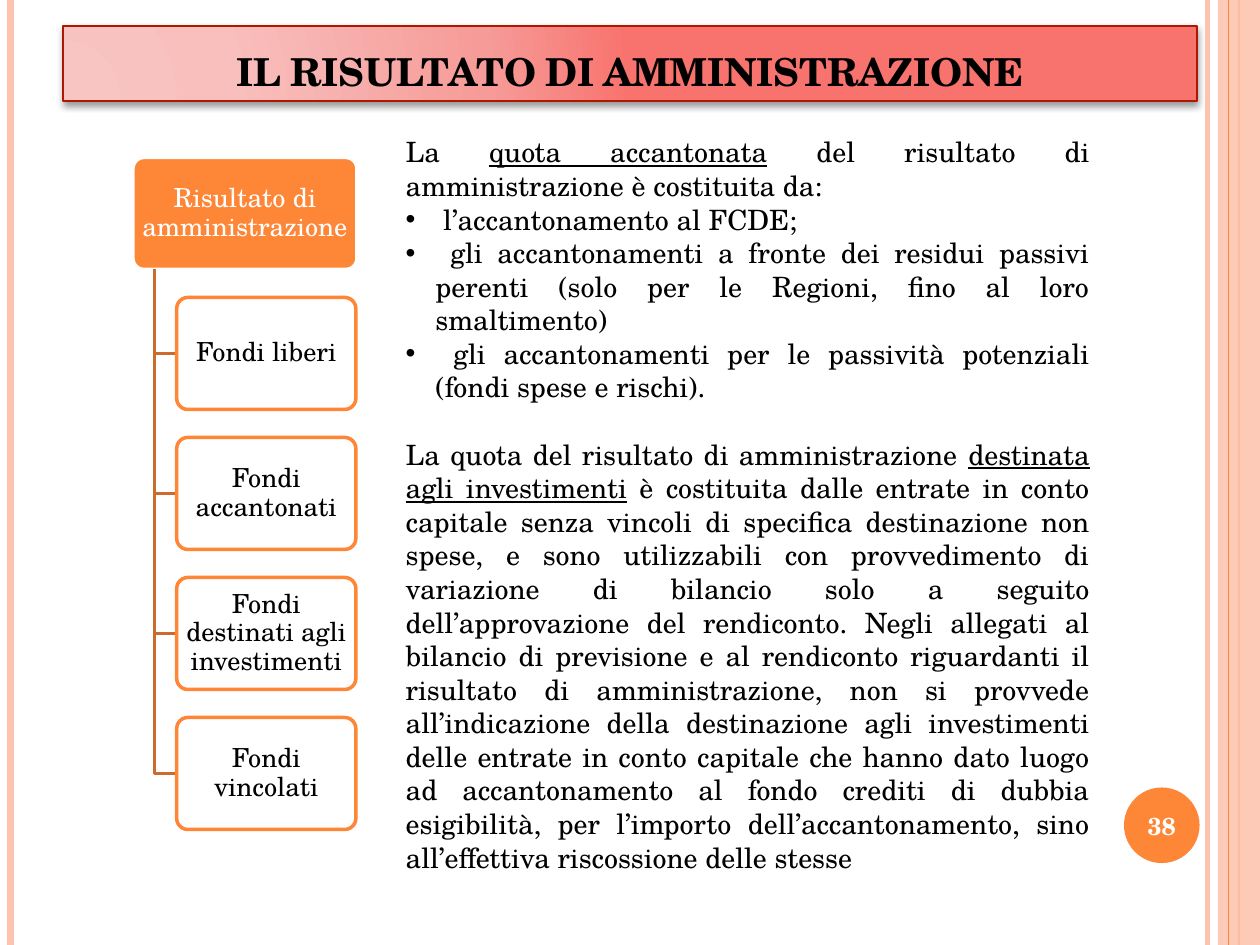
"""Build the slide on the components of the administration result."""
import pptx
import pptx.dml.color
import pptx.enum.shapes
import pptx.enum.text
import pptx.oxml
import pptx.oxml.ns
import pptx.util

Pt = pptx.util.Pt
RGBColor = pptx.dml.color.RGBColor
MSO_SHAPE = pptx.enum.shapes.MSO_SHAPE
PP_ALIGN = pptx.enum.text.PP_ALIGN
MSO_ANCHOR = pptx.enum.text.MSO_ANCHOR
qn = pptx.oxml.ns.qn

ORANGE = RGBColor(0xFE, 0x86, 0x37)
PEACH = RGBColor(0xFE, 0xC3, 0xAE)
BROWN = RGBColor(0xCB, 0x6B, 0x2C)
DARK_RED = RGBColor(0xAC, 0x18, 0x00)
WHITE = RGBColor(0xFF, 0xFF, 0xFF)
BLACK = RGBColor(0x00, 0x00, 0x00)
FONT = "TeX Gyre Schola"
NS = 'xmlns:a="http://schemas.openxmlformats.org/drawingml/2006/main"'

presentation = pptx.Presentation()
presentation.slide_width = Pt(720)
presentation.slide_height = Pt(540)
slide = presentation.slides.add_slide(presentation.slide_layouts[6])
shapes = slide.shapes


def add_block(kind, left, top, width, height, fill, line=None, weight=2):
    block = shapes.add_shape(kind, Pt(left), Pt(top), Pt(width), Pt(height))
    block.shadow.inherit = False
    block.fill.solid()
    block.fill.fore_color.rgb = fill
    if line is None:
        block.line.fill.background()
    else:
        block.line.color.rgb = line
        block.line.width = Pt(weight)
    frame = block.text_frame
    frame.word_wrap = True
    frame.vertical_anchor = MSO_ANCHOR.MIDDLE
    frame.margin_left = frame.margin_right = 0
    frame.margin_top = frame.margin_bottom = 0
    return block


def add_run(paragraph, text, size, color=BLACK, bold=False, underline=False):
    run = paragraph.add_run()
    run.text = text
    run.font.name = FONT
    run.font.size = Pt(size)
    run.font.color.rgb = color
    run.font.bold = bold
    run.font.underline = underline
    return run


for x, color, weight in [(690, PEACH, 3), (6, PEACH, 4.5), (708, ORANGE, 1.5), (702, ORANGE, 0.75)]:
    if x == 702:
        side_band = add_block(MSO_SHAPE.RECTANGLE, 696, 0, 24, 540, PEACH)
        band_color = side_band.fill._xPr.find(qn("a:solidFill"))[0]
        band_color.append(pptx.oxml.parse_xml(f'<a:alpha {NS} val="87000"/>'))
    stripe = shapes.add_connector(
        pptx.enum.shapes.MSO_CONNECTOR.STRAIGHT, Pt(x), 0, Pt(x), Pt(540))
    stripe.line.color.rgb = color
    stripe.line.width = Pt(weight)
    stripe._element.spPr.append(pptx.oxml.parse_xml(f"<a:effectLst {NS}/>"))

page_badge = add_block(MSO_SHAPE.OVAL, 642.3, 450, 43.2, 43.2, ORANGE)
page_number = page_badge.text_frame.paragraphs[0]
page_number.alignment = PP_ALIGN.CENTER
add_run(page_number, "38", 14, WHITE, bold=True)

ROOT_LEFT, ROOT_TOP, ROOT_WIDTH, BOX_HEIGHT = 76, 90, 128, 64
FUND_LEFT, FUND_WIDTH, FUND_PITCH = 101, 102.4, 80
TRUNK_X, ROOT_BOTTOM = 88.4, ROOT_TOP + BOX_HEIGHT
funds = ["Fondi liberi", "Fondi accantonati", "Fondi destinati agli investimenti", "Fondi vincolati"]
boxes = [("Risultato di amministrazione", ROOT_LEFT, ROOT_TOP, ROOT_WIDTH, ORANGE, WHITE, WHITE)]
boxes += [(fund, FUND_LEFT, ROOT_TOP + FUND_PITCH * level, FUND_WIDTH, WHITE, ORANGE, BLACK)
          for level, fund in enumerate(funds, 1)]

for label, left, top, width, fill, outline, text_color in boxes:
    if left == FUND_LEFT:
        middle = top + BOX_HEIGHT / 2
        builder = shapes.build_freeform(Pt(TRUNK_X), Pt(ROOT_BOTTOM))
        builder.add_line_segments(
            [(Pt(TRUNK_X), Pt(middle)), (Pt(FUND_LEFT), Pt(middle))], close=False)
        branch = builder.convert_to_shape()
        branch.shadow.inherit = False
        branch.fill.background()
        branch.line.color.rgb = BROWN
        branch.line.width = Pt(2)
    box = add_block(MSO_SHAPE.ROUNDED_RECTANGLE, left, top, width, BOX_HEIGHT, fill, outline)
    box.adjustments[0] = 0.1
    caption = box.text_frame.paragraphs[0]
    caption.alignment = PP_ALIGN.CENTER
    caption.line_spacing = 0.9
    add_run(caption, label, 15, text_color)

banner = add_block(MSO_SHAPE.RECTANGLE, 36, 14.8, 648, 42.8, WHITE, DARK_RED, 1)
banner_props = banner._element.spPr
stops = [(0, "F8C5C3"), (30, "F8BFBD"), (75, "F69B98"), (100, "F8736E")]
stop_xml = "".join(
    f'<a:gs pos="{pos * 1000}"><a:srgbClr val="{color}"/></a:gs>' for pos, color in stops)
banner_props.replace(banner_props.find(qn("a:solidFill")), pptx.oxml.parse_xml(
    f'<a:gradFill {NS}><a:gsLst>{stop_xml}</a:gsLst><a:path path="circle">'
    '<a:fillToRect l="5000" t="100000" r="120000" b="10000"/></a:path></a:gradFill>'))
banner_props.find(qn("a:effectLst")).append(pptx.oxml.parse_xml(
    f'<a:outerShdw {NS} blurRad="{Pt(4)}" dist="{Pt(2)}" dir="5400000" rotWithShape="0">'
    '<a:srgbClr val="000000"><a:alpha val="40000"/></a:srgbClr></a:outerShdw>'))
banner.text_frame.vertical_anchor = MSO_ANCHOR.BOTTOM
banner.text_frame.margin_bottom = Pt(3.6)
title = banner.text_frame.paragraphs[0]
title.alignment = PP_ALIGN.CENTER
title_run = add_run(title, "IL RISULTATO DI AMMINISTRAZIONE", 22, bold=True)
title_run.font._element.set("cap", "small")

explanation = [
    (False, 0, [("La ", False), ("quota accantonata", True),
                (" del risultato di amministrazione è costituita da:", False)]),
    (True, 0, [(" l’accantonamento al FCDE;", False)]),
    (True, 0, [(" gli accantonamenti a fronte dei residui passivi perenti (solo per le Regioni, "
                "fino al loro smaltimento)", False)]),
    (True, 0, [(" gli accantonamenti per le passività potenziali (fondi spese e rischi).", False)]),
    (False, 19.2, [
        ("La quota del risultato di amministrazione ", False),
        ("destinata agli investimenti", True),
        (" è costituita dalle entrate in conto capitale senza vincoli di specifica destinazione "
         "non spese, e sono utilizzabili con provvedimento di variazione di bilancio solo a "
         "seguito dell’approvazione del rendiconto. Negli allegati al bilancio di previsione e "
         "al rendiconto riguardanti il risultato di amministrazione, non si provvede "
         "all’indicazione della destinazione agli investimenti delle entrate in conto capitale "
         "che hanno dato luogo ad accantonamento al fondo crediti di dubbia esigibilità, per "
         "l’importo dell’accantonamento, sino all’effettiva riscossione delle stesse", False)]),
]
body = shapes.add_textbox(Pt(224.8), Pt(73.6), Pt(405), Pt(429)).text_frame
body.word_wrap = True
for index, (bulleted, gap, parts) in enumerate(explanation):
    paragraph = body.add_paragraph() if index else body.paragraphs[0]
    paragraph.alignment = PP_ALIGN.JUSTIFY
    if gap:
        paragraph.space_before = Pt(gap)
    if bulleted:
        props = paragraph._p.get_or_add_pPr()
        props.set("marL", str(Pt(17)))
        props.set("indent", str(-Pt(17)))
        props.append(pptx.oxml.parse_xml(f'<a:buFont {NS} typeface="Arial"/>'))
        props.append(pptx.oxml.parse_xml(f'<a:buChar {NS} char="•"/>'))
    for text, underlined in parts:
        add_run(paragraph, text, 16, underline=underlined)

presentation.save("out.pptx")
